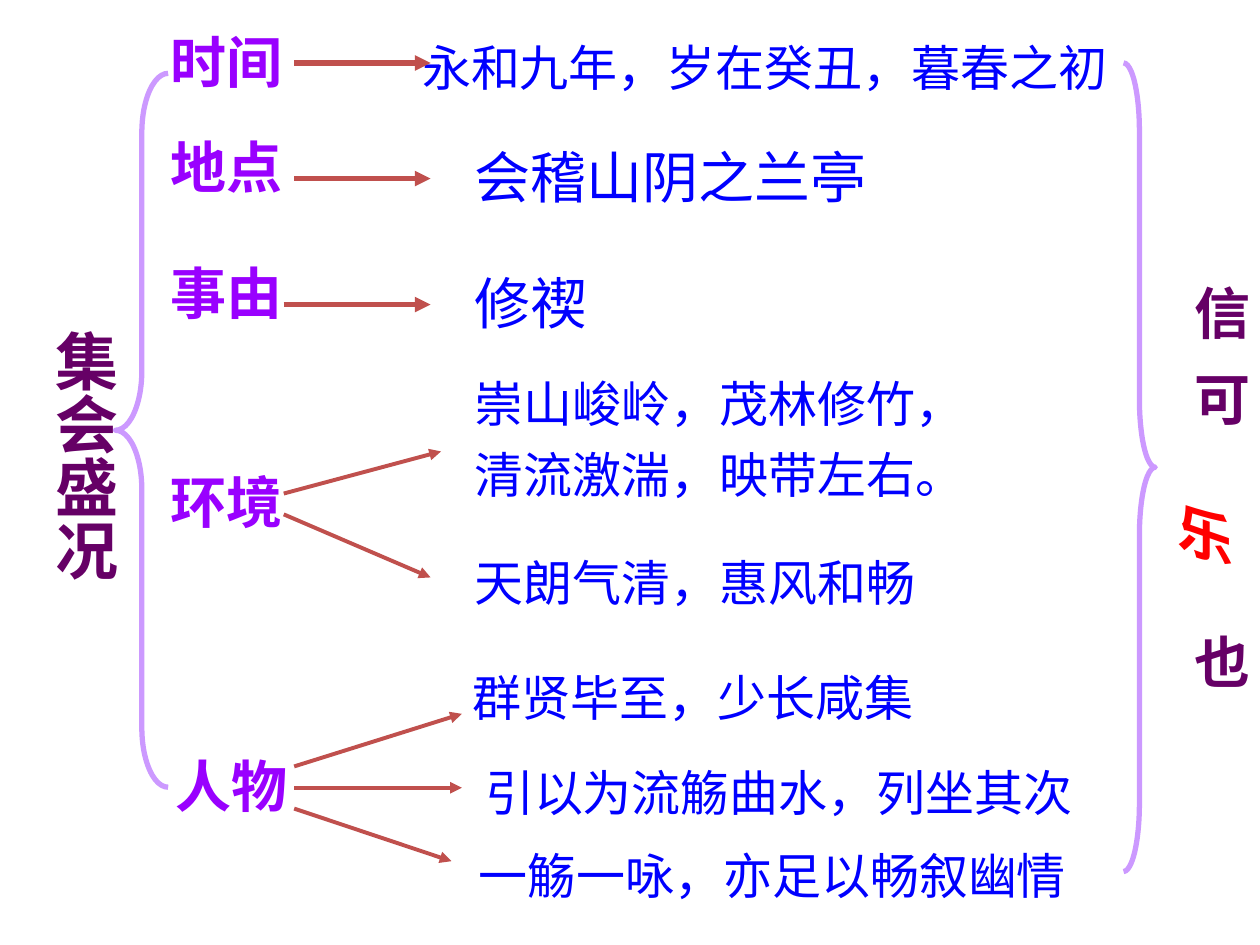
import pptx
import pptx.dml.color
import pptx.enum.shapes
import pptx.enum.text
import pptx.oxml
import pptx.oxml.ns
import pptx.util

Cm = pptx.util.Cm
Pt = pptx.util.Pt
RGBColor = pptx.dml.color.RGBColor
MSO_SHAPE = pptx.enum.shapes.MSO_SHAPE
PP_ALIGN = pptx.enum.text.PP_ALIGN

FONT = "Times New Roman"
PLUM = RGBColor(0x66, 0x00, 0x66)
VIOLET = RGBColor(0x99, 0x00, 0xFF)
BLUE = RGBColor(0x00, 0x00, 0xFF)
RED = RGBColor(0xFF, 0x00, 0x00)
BRICK = RGBColor(0xC0, 0x50, 0x4D)
LILAC = RGBColor(0xCC, 0x99, 0xFF)

LABEL_LEFT = 3.18
DETAIL_LEFT = 9.32


def format_text(tf, size, color, bold=False, align=PP_ALIGN.LEFT):
    tf.word_wrap = True
    tf.auto_size = pptx.enum.text.MSO_AUTO_SIZE.SHAPE_TO_FIT_TEXT
    tf.vertical_anchor = pptx.enum.text.MSO_ANCHOR.TOP
    for i, p in enumerate(tf.paragraphs):
        p.alignment = align
        p.space_before = Pt(7 if i else 0)
        for r in p.runs:
            r.font.name = FONT
            r.font.size = Pt(size)
            r.font.bold = bold
            r.font.color.rgb = color


def set_vertical(tf):
    """Run the text from top to bottom with upright characters."""
    tf._txBody.bodyPr.set("vert", "eaVert")


prs = pptx.Presentation()
prs.slide_width = Cm(25.4)
prs.slide_height = Cm(19.05)
s = prs.slides.add_slide(prs.slide_layouts.get_by_name("Title Only"))

# Title, set vertically at the left
sp = s.shapes.title
sp.left, sp.top, sp.width, sp.height = Cm(0.69), Cm(6.53), Cm(2.03), Cm(6.58)
sp.text_frame.text = "集会盛况"
set_vertical(sp.text_frame)
format_text(sp.text_frame, 36, PLUM, bold=True)

# Aspects of the gathering: text, top, width, alignment
labels = [
    ("时间", 0.43, 2.97, PP_ALIGN.LEFT),
    ("地点", 2.54, 3.81, PP_ALIGN.LEFT),
    ("事由", 5.08, 3.18, PP_ALIGN.LEFT),
    ("环境", 9.31, 3.39, PP_ALIGN.LEFT),
    ("人物", 15.03, 2.97, PP_ALIGN.CENTER),
]
for text, top, width, align in labels:
    sp = s.shapes.add_textbox(Cm(LABEL_LEFT), Cm(top), Cm(width), Cm(1.6))
    sp.text_frame.text = text
    format_text(sp.text_frame, 32, VIOLET, bold=True, align=align)

# Quotations: text, left, top, width, height, size, alignment
details = [
    ("永和九年，岁在癸丑，暮春之初", 8.26, 0.64, 14.4, 1.45, 28, PP_ALIGN.LEFT),
    ("会稽山阴之兰亭", DETAIL_LEFT, 2.75, 9.1, 1.6, 32, PP_ALIGN.LEFT),
    ("修禊", DETAIL_LEFT, 5.29, 5.72, 1.6, 32, PP_ALIGN.LEFT),
    ("崇山峻岭，茂林修竹，\n清流激湍，映带左右。", DETAIL_LEFT, 7.41, 13.13, 3.23, 28, PP_ALIGN.LEFT),
    ("天朗气清，惠风和畅", DETAIL_LEFT, 11.01, 11.22, 1.45, 28, PP_ALIGN.LEFT),
    ("群贤毕至，少长咸集", 9.1, 13.34, 9.74, 1.45, 28, PP_ALIGN.CENTER),
    ("引以为流觞曲水，列坐其次", 9.53, 15.24, 13.34, 1.45, 28, PP_ALIGN.LEFT),
    ("一觞一咏，亦足以畅叙幽情", DETAIL_LEFT, 16.93, 12.5, 1.45, 28, PP_ALIGN.CENTER),
]
for text, left, top, width, height, size, align in details:
    sp = s.shapes.add_textbox(Cm(left), Cm(top), Cm(width), Cm(height))
    sp.text_frame.text = text
    format_text(sp.text_frame, size, BLUE, align=align)

# Arrows from aspects to quotations: x1, y1, x2, y2, line width
arrows = [
    (5.93, 1.27, 8.68, 1.27, 3),
    (5.93, 3.6, 8.68, 3.6, 3),
    (5.72, 6.14, 8.68, 6.14, 3),
    (5.72, 9.95, 8.89, 9.1, 2.25),
    (5.72, 10.37, 8.68, 11.64, 2.25),
    (5.93, 15.45, 9.31, 14.39, 2.25),
    (5.93, 15.88, 9.31, 15.88, 2.25),
    (5.93, 16.3, 9.1, 17.36, 2.25),
]
for x1, y1, x2, y2, weight in arrows:
    sp = s.shapes.add_connector(
        pptx.enum.shapes.MSO_CONNECTOR.STRAIGHT, Cm(x1), Cm(y1), Cm(x2), Cm(y2))
    sp.line.color.rgb = BRICK
    sp.line.width = Pt(weight)
    tail = pptx.oxml.parse_xml(
        f'<a:tailEnd {pptx.oxml.ns.nsdecls("a")} type="triangle"/>')
    sp.line._get_or_add_ln().append(tail)
    sp._element.spPr.append(
        pptx.oxml.parse_xml(f'<a:effectLst {pptx.oxml.ns.nsdecls("a")}/>'))

# Braces: shape, left, top, width, height, curve
braces = [
    (MSO_SHAPE.LEFT_BRACE, 2.33, 1.48, 1.06, 14.39, 1.13),
    (MSO_SHAPE.RIGHT_BRACE, 22.65, 1.27, 0.64, 16.3, 2.14),
]
for kind, left, top, width, height, curve in braces:
    sp = s.shapes.add_shape(kind, Cm(left), Cm(top), Cm(width), Cm(height))
    sp.adjustments[0] = curve
    sp.fill.background()
    sp.line.color.rgb = LILAC
    sp.line.width = Pt(3)
    sp.shadow.inherit = False

# Conclusion at the right, spread out by character spacing in points
sp = s.shapes.add_textbox(Cm(23.55), Cm(5.51), Cm(1.85), Cm(8.89))
tf = sp.text_frame
set_vertical(tf)
p = tf.paragraphs[0]
for char, gap in [("信", 17), ("可", 40), ("乐", 46), ("也", 0)]:
    r = p.add_run()
    r.text = char
    r._r.get_or_add_rPr().set("spc", str(gap * 100))
format_text(tf, 32, PLUM, bold=True, align=PP_ALIGN.CENTER)
joy = p.runs[2]
joy.font.color.rgb = RED
joy.font.italic = True

prs.save("out.pptx")
